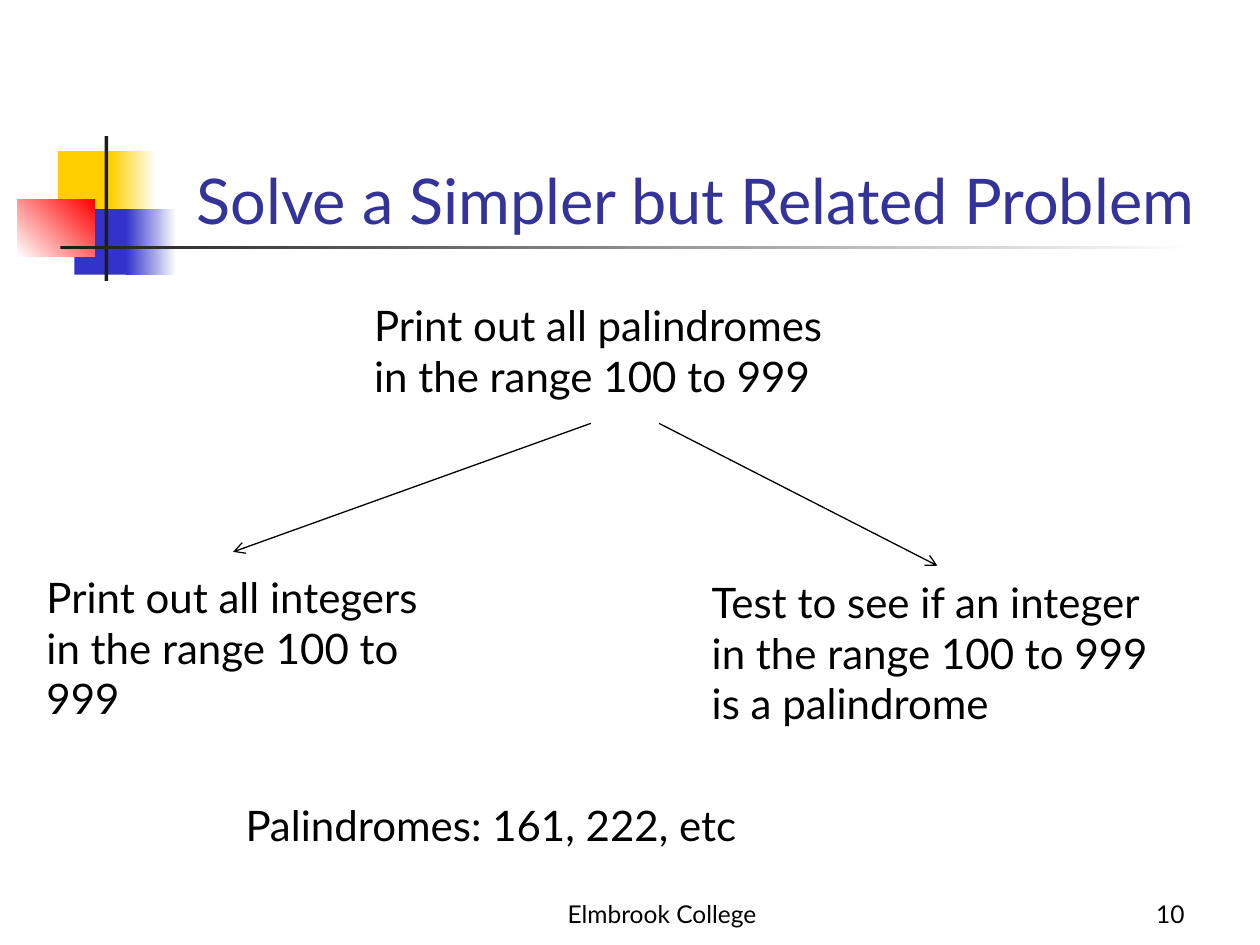
"""Build a slide that splits a palindrome problem into two simpler ones."""
from lxml.etree import SubElement as Sub
from pptx import Presentation
from pptx.dml.color import RGBColor as RGB
from pptx.enum.shapes import MSO_CONNECTOR as Conn, MSO_SHAPE as Shape
from pptx.enum.text import MSO_ANCHOR as Anchor, PP_ALIGN as Align
from pptx.oxml.ns import qn
from pptx.util import Inches, Pt

FONT = "Lato"
BLACK = RGB(0, 0, 0)
WHITE = RGB(255, 255, 255)
GOLD = RGB(0xFF, 0xCF, 0x01)
BLUE = RGB(0x33, 0x33, 0xCC)
RED = RGB(255, 0, 0)
DARK = RGB(0x1C, 0x1C, 0x1C)
NAVY = RGB(0x33, 0x33, 0x99)

BARS = [
    ((0.46, 1.2, 0.48, 0.52), [GOLD], 0),
    ((0.88, 1.2, 0.36, 0.52), [GOLD, WHITE], 0),
    ((0.59, 1.66, 0.46, 0.52), [BLUE], 0),
    ((1, 1.66, 0.4, 0.52), [BLUE, WHITE], 0),
    ((0.14, 1.58, 0.61, 0.46), [WHITE, RED], 45),
    ((0.83, 1.08, 0.03, 1.15), [DARK], 0),
    ((0.48, 1.95, 9, 0.03), [DARK, WHITE], 0),
]
HEADS = [
    ((3.67, 6.92, 3.17, 0.5), "Elmbrook College", 14, BLACK, Align.CENTER),
    ((7.42, 6.92, 2.08, 0.5), "10", 14, BLACK, Align.RIGHT),
    ((1.26, 0.68, 8.52, 1.25), "Solve a Simpler but Related Problem",
     36, NAVY, Align.CENTER),
]
NOTES = [
    ((2.87, 2.33, 3.82, 0.91),
     ["Print out all palindromes", "in the range 100 to 999"]),
    ((0.27, 4.49, 3.31, 1.72),
     ["Print out all integers", "in the range 100 to", "999"]),
    ((5.55, 4.53, 3.82, 1.31),
     ["Test to see if an integer", "in the range 100 to 999",
      "is a palindrome"]),
    ((1.85, 6.3, 4.18, 0.5), ["Palindromes: 161, 222, etc"]),
]
ARROWS = [((4.69, 3.36), (1.85, 4.38)), ((5.23, 3.36), (7.44, 4.49))]


def units(nums):
    return [Inches(n) for n in nums]


def add_bar(slide, at, tints, angle):
    bar = slide.shapes.add_shape(Shape.RECTANGLE, *units(at))
    bar.shadow.inherit = False
    bar.line.fill.background()
    if len(tints) == 1:
        bar.fill.solid()
        bar.fill.fore_color.rgb = tints[0]
        return
    bar.fill.gradient()
    bar.fill.gradient_angle = angle
    for stop, tint in zip(bar.fill.gradient_stops, tints):
        stop.color.rgb = tint


def add_text(slide, at, lines, size=24, tint=BLACK, align=Align.LEFT,
             anchor=Anchor.TOP):
    frame = slide.shapes.add_textbox(*units(at)).text_frame
    frame.word_wrap = True
    frame.vertical_anchor = anchor
    for i, line in enumerate(lines):
        para = frame.add_paragraph() if i else frame.paragraphs[0]
        para.alignment = align
        run = para.add_run()
        run.text = line
        run.font.name = FONT
        run.font.size = Pt(size)
        run.font.color.rgb = tint


def add_arrow(slide, start, end):
    arrow = slide.shapes.add_connector(Conn.STRAIGHT, *units(start + end))
    arrow.line.color.rgb = BLACK
    arrow.line.width = Pt(0.75)
    Sub(arrow.line._get_or_add_ln(), qn("a:tailEnd"), type="arrow")
    Sub(arrow._element.spPr, qn("a:effectLst"))


def main():
    deck = Presentation()
    deck.slide_width, deck.slide_height = units((10, 7.5))
    slide = deck.slides.add_slide(deck.slide_layouts[6])
    for bar in BARS:
        add_bar(slide, *bar)
    for at, text, size, tint, align in HEADS:
        add_text(slide, at, [text], size, tint, align, Anchor.BOTTOM)
    for at, lines in NOTES:
        add_text(slide, at, lines)
    for start, end in ARROWS:
        add_arrow(slide, start, end)
    deck.save("out.pptx")


if __name__ == "__main__":
    main()
